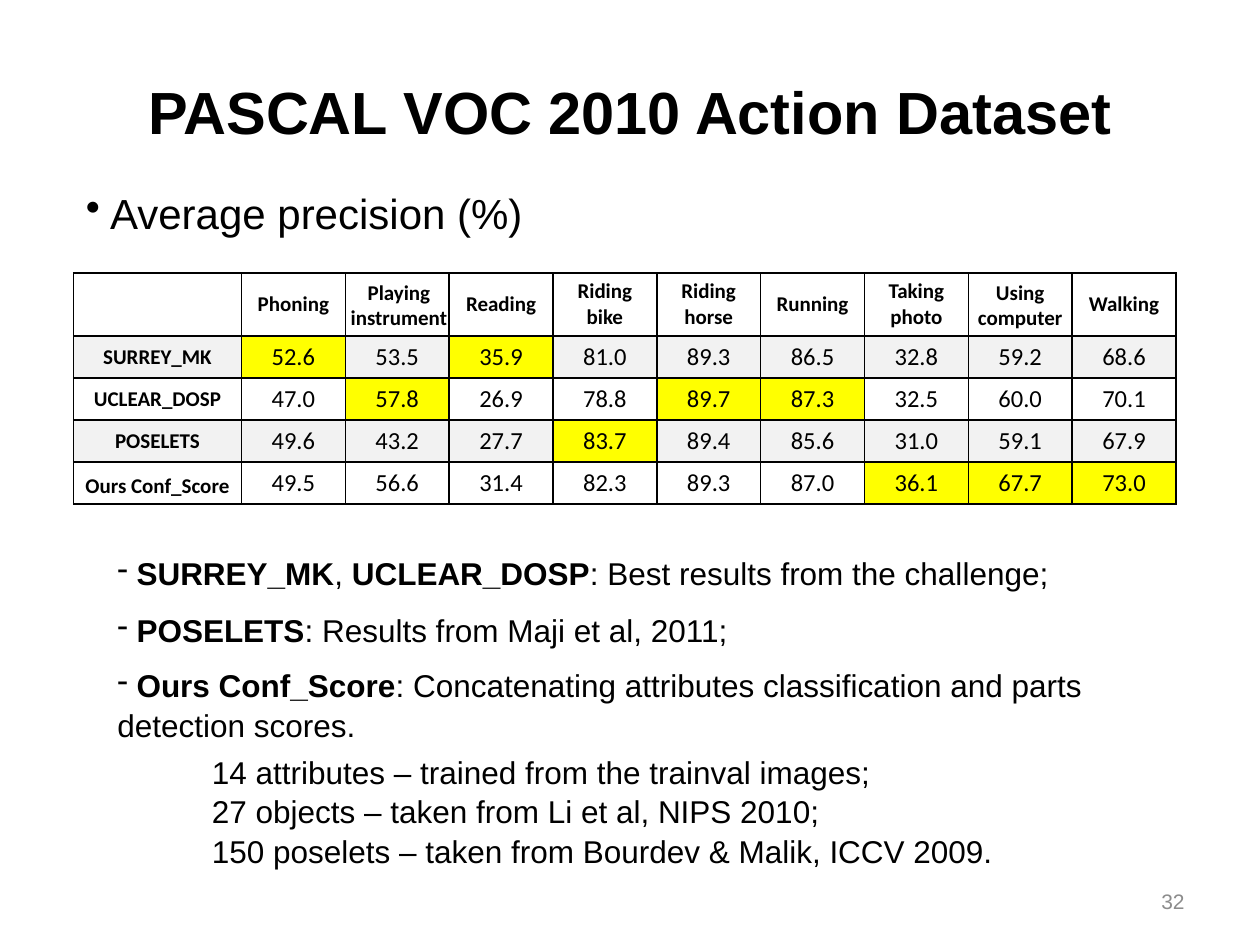
from dataclasses import dataclass

from lxml.etree import SubElement
from pptx import Presentation
from pptx.dml.color import RGBColor
from pptx.enum.text import MSO_ANCHOR, PP_ALIGN
from pptx.oxml.ns import qn
from pptx.util import Pt

COLORS = {"text": "000000", "number": "8C8C8C", "white": "FFFFFF",
          "band": "F2F2F2", "best": "FFFF00"}

# Text formats
TITLE = {"name": "Arial", "size": Pt(34), "bold": True}
TOPIC = {"name": "Arial", "size": Pt(24), "bold": False}
NOTE = {"name": "Arial", "size": Pt(18), "bold": False}
NUMBER = {"name": "Arial", "size": Pt(12), "bold": False}
LABEL = {"name": "Calibri", "size": Pt(12), "bold": True}
SCORE = {"name": "Calibri", "size": Pt(14), "bold": False}


@dataclass
class Line:
    """One paragraph; parts between ** marks are bold."""
    text: str
    bullet: str = ""
    space_before: float = 0


@dataclass
class Box:
    left: float
    top: float
    width: float
    height: float
    lines: list[Line]
    style: dict
    align: PP_ALIGN = PP_ALIGN.LEFT
    anchor: MSO_ANCHOR = MSO_ANCHOR.TOP
    color: str = "text"
    margin_top: float = 3.6
    spacing: float = 1.0


def write_line(p, line: Line, style: dict, align: PP_ALIGN, color: str = "text") -> None:
    p.alignment = align
    for i, part in enumerate(line.text.split("**")):
        if not part:
            continue
        r = p.add_run()
        r.text = part
        values = {**style, "bold": style["bold"] or i % 2 == 1}
        for name, value in values.items():
            setattr(r.font, name, value)
        r.font.color.rgb = RGBColor.from_string(COLORS[color])


def add_box(s, box: Box) -> None:
    sp = s.shapes.add_textbox(Pt(box.left), Pt(box.top), Pt(box.width), Pt(box.height))
    tf = sp.text_frame
    tf.word_wrap = True
    tf.vertical_anchor = box.anchor
    tf.margin_top = Pt(box.margin_top)
    for i, line in enumerate(box.lines):
        p = tf.add_paragraph() if i else tf.paragraphs[0]
        if line.bullet:
            SubElement(p._p.get_or_add_pPr(), qn("a:buChar"), char=line.bullet)
        p.line_spacing = box.spacing
        p.space_before = Pt(line.space_before)
        write_line(p, line, box.style, box.align, box.color)


def format_cell(cell, text: str, style: dict, fill: str) -> None:
    cell.vertical_anchor = MSO_ANCHOR.MIDDLE
    cell.margin_top = cell.margin_bottom = 0
    cell.margin_left = cell.margin_right = Pt(3.6)
    write_line(cell.text_frame.paragraphs[0], Line(text), style, PP_ALIGN.CENTER)
    tc_pr = cell._tc.get_or_add_tcPr()
    for side in ("a:lnL", "a:lnR", "a:lnT", "a:lnB"):
        ln = SubElement(tc_pr, qn(side), w=str(Pt(1)))
        SubElement(SubElement(ln, qn("a:solidFill")), qn("a:srgbClr"), val=COLORS["text"])
    cell.fill.solid()
    cell.fill.fore_color.rgb = RGBColor.from_string(COLORS[fill])


def add_results(s, actions: list[str], results: dict[str, list[float]]) -> None:
    rows, cols = len(results) + 1, len(actions) + 1
    table = s.shapes.add_table(rows, cols, Pt(42), Pt(156), Pt(630), Pt(132)).table
    table.first_row = table.horz_banding = False
    for i, col in enumerate(table.columns):
        col.width = Pt(59.33 if i else 96)
    for i, row in enumerate(table.rows):
        row.height = Pt(24 if i else 36)
    # Header row
    for c, text in enumerate(["", *actions]):
        format_cell(table.cell(0, c), text, LABEL, "white")
    # Score rows: the best score of each action is marked
    best = [max(column) for column in zip(*results.values())]
    for r, (method, scores) in enumerate(results.items(), 1):
        base = "band" if r % 2 else "white"
        format_cell(table.cell(r, 0), method, LABEL, base)
        for c, score in enumerate(scores, 1):
            fill = "best" if score == best[c - 1] else base
            format_cell(table.cell(r, c), f"{score:.1f}", SCORE, fill)


# Columns and rows with an empty label are labelled by LABEL boxes
ACTIONS = ["Phoning", "", "Reading", "Riding bike", "Riding horse", "Running",
           "Taking photo", "", "Walking"]
RESULTS = {
    "SURREY_MK": [52.6, 53.5, 35.9, 81.0, 89.3, 86.5, 32.8, 59.2, 68.6],
    "UCLEAR_DOSP": [47.0, 57.8, 26.9, 78.8, 89.7, 87.3, 32.5, 60.0, 70.1],
    "POSELETS": [49.6, 43.2, 27.7, 83.7, 89.4, 85.6, 31.0, 59.1, 67.9],
    "": [49.5, 56.6, 31.4, 82.3, 89.3, 87.0, 36.1, 67.7, 73.0],
}

HEADINGS = [
    Box(516, 500.4, 168, 28.8, [Line("32")], NUMBER, PP_ALIGN.RIGHT,
        MSO_ANCHOR.MIDDLE, "number"),
    Box(54, 36, 612, 48, [Line("PASCAL VOC 2010 Action Dataset")], TITLE,
        PP_ALIGN.CENTER, margin_top=7),
    Box(42, 102, 270, 36, [Line(" Average precision (%)", "•")], TOPIC, spacing=1.05),
]
TABLE_LABELS = [
    Box(192, 156, 72, 36, [Line("Playing"), Line("instrument")], LABEL, PP_ALIGN.CENTER),
    Box(550, 156, 66, 36, [Line("Using computer")], LABEL, PP_ALIGN.CENTER),
    Box(36, 266.4, 108, 21.6, [Line("Ours Conf_Score")], LABEL, PP_ALIGN.CENTER),
]
NOTES = [
    Box(60, 312, 600, 71, [
        Line(" **SURREY_MK**, **UCLEAR_DOSP**: Best results from the challenge;", "-"),
        Line(" **POSELETS**: Results from Maji et al, 2011;", "-", 10),
    ], NOTE, spacing=1.05),
    Box(114, 425.5, 462, 73, [
        Line("14 attributes – trained from the trainval images;"),
        Line("27 objects – taken from Li et al, NIPS 2010;"),
        Line("150 poselets – taken from Bourdev & Malik, ICCV 2009."),
    ], NOTE, spacing=1.05),
    Box(60, 376, 600, 51, [
        Line(" **Ours Conf_Score**: Concatenating attributes classification "
             "and parts detection scores.", "-"),
    ], NOTE, spacing=1.05),
]


def main() -> None:
    prs = Presentation()
    prs.slide_width, prs.slide_height = Pt(720), Pt(540)
    s = prs.slides.add_slide(prs.slide_layouts[6])
    for box in HEADINGS:
        add_box(s, box)
    add_results(s, ACTIONS, RESULTS)
    for box in TABLE_LABELS + NOTES:
        add_box(s, box)
    prs.save("out.pptx")


if __name__ == "__main__":
    main()
